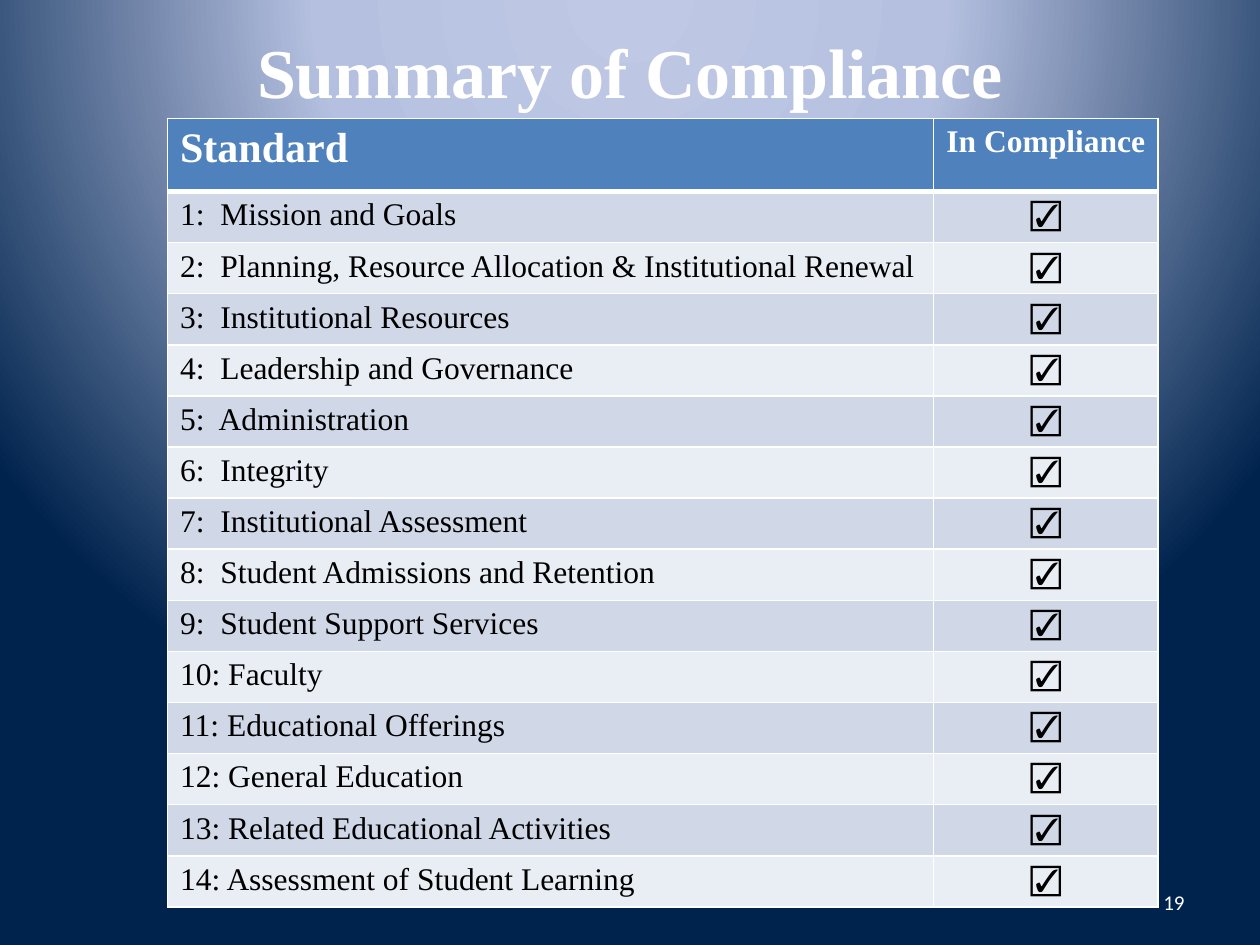
from dataclasses import dataclass
from lxml.etree import SubElement
from pptx import Presentation
from pptx.dml.color import RGBColor
from pptx.enum.text import MSO_ANCHOR, PP_ALIGN
from pptx.oxml import parse_xml
from pptx.oxml.ns import nsdecls, qn
from pptx.util import Inches, Pt

WHITE = RGBColor(0xFF, 0xFF, 0xFF)
BLACK = RGBColor(0, 0, 0)
BLUE = RGBColor(0x4F, 0x81, 0xBD)
BANDS = RGBColor(0xD0, 0xD8, 0xE8), RGBColor(0xE9, 0xED, 0xF4)
GLOW = (0, RGBColor(0xBF, 0xC9, 0xE5)), (40, RGBColor(0xB5, 0xC0, 0xE0)), (100, RGBColor(0, 0x23, 0x4D))

WIDE, HIGH = Inches(10), Inches(7.5)
COLS = Inches(6.08), Inches(1.78)
HEAD, BODY = Inches(0.58), Inches(5.68)

STANDARDS = (
    "Mission and Goals",
    "Planning, Resource Allocation & Institutional Renewal",
    "Institutional Resources",
    "Leadership and Governance",
    "Administration",
    "Integrity",
    "Institutional Assessment",
    "Student Admissions and Retention",
    "Student Support Services",
    "Faculty",
    "Educational Offerings",
    "General Education",
    "Related Educational Activities",
    "Assessment of Student Learning",
)


@dataclass(frozen=True)
class Style:
    size: int
    color: RGBColor = WHITE
    bold: bool = False
    align: PP_ALIGN = PP_ALIGN.LEFT
    font: str = "Times New Roman"


TITLE = Style(40, bold=True, align=PP_ALIGN.CENTER)
LABEL = Style(24, bold=True)
STATUS = Style(18, bold=True, align=PP_ALIGN.CENTER)
ITEM = Style(18, BLACK)
CHECK = Style(18, BLACK, align=PP_ALIGN.CENTER)
NUMBER = Style(12, align=PP_ALIGN.RIGHT, font="Calibri")


def write(frame, text: str, style: Style) -> None:
    para = frame.paragraphs[0]
    para.alignment = style.align
    run = para.add_run()
    run.text = text
    font = run.font
    font.name, font.size, font.bold = style.font, Pt(style.size), style.bold
    font.color.rgb = style.color


def place(shape, left: float, top: float, width: float, height: float) -> None:
    """Set a shape's box as shares of the slide's size."""
    shape.left, shape.top = int(left * WIDE), int(top * HIGH)
    shape.width, shape.height = int(width * WIDE), int(height * HIGH)


def glow(slide) -> None:
    """Fill the background with a circular gradient centred at its top."""
    slide.background.fill.gradient()
    old = slide.element.find(".//" + qn("a:gradFill"))
    stops = "".join(
        f'<a:gs pos="{at * 1000}"><a:srgbClr val="{color}"/></a:gs>' for at, color in GLOW
    )
    new = parse_xml(
        f'<a:gradFill {nsdecls("a")} rotWithShape="1"><a:gsLst>{stops}</a:gsLst>'
        '<a:path path="circle"><a:fillToRect l="50000" t="-80000" r="50000" b="180000"/>'
        "</a:path></a:gradFill>"
    )
    old.getparent().replace(old, new)


def edge(cell, side: str, width: float) -> None:
    line = SubElement(cell._tc.get_or_add_tcPr(), qn(f"a:ln{side}"), w=str(Pt(width)))
    SubElement(SubElement(line, qn("a:solidFill")), qn("a:srgbClr"), val=str(WHITE))


def paint(cell, text: str, style: Style, fill: RGBColor, top: float, base: float) -> None:
    for side, width in (("L", 1), ("R", 1), ("T", top), ("B", base)):
        edge(cell, side, width)
    cell.fill.solid()
    cell.fill.fore_color.rgb = fill
    write(cell.text_frame, text, style)


def chart(slide) -> None:
    """Add the table of standards with their compliance marks."""
    count = len(STANDARDS)
    table = slide.shapes.add_table(
        count + 1, len(COLS), Inches(1.33), Inches(0.94), sum(COLS), HEAD + BODY
    ).table
    table.horz_banding = False
    for col, width in zip(table.columns, COLS):
        col.width = width
    for row in table.rows:
        row.height = BODY // count
    table.rows[0].height = HEAD

    paint(table.cell(0, 0), "Standard", LABEL, BLUE, 1, 3)
    paint(table.cell(0, 1), "In Compliance", STATUS, BLUE, 1, 3)
    for num, name in enumerate(STANDARDS, 1):
        fill = BANDS[(num - 1) % 2]
        top = 3 if num == 1 else 1
        paint(table.cell(num, 0), f"{num}:".ljust(4) + name, ITEM, fill, top, 1)
        paint(table.cell(num, 1), "☑", CHECK, fill, top, 1)


def main() -> None:
    deck = Presentation()
    deck.slide_width, deck.slide_height = WIDE, HIGH
    slide = deck.slides.add_slide(deck.slide_layouts[5])
    glow(slide)

    title = slide.shapes.title
    place(title, 0.05, -0.01, 0.9, 0.17)
    title.text_frame.vertical_anchor = MSO_ANCHOR.MIDDLE
    write(title.text_frame, "Summary of Compliance", TITLE)

    chart(slide)

    page = slide.shapes.add_textbox(0, 0, 0, 0)
    place(page, 0.72, 0.93, 0.23, 0.05)
    page.text_frame.word_wrap = True
    page.text_frame.vertical_anchor = MSO_ANCHOR.MIDDLE
    write(page.text_frame, "19", NUMBER)

    deck.save("out.pptx")


if __name__ == "__main__":
    main()
